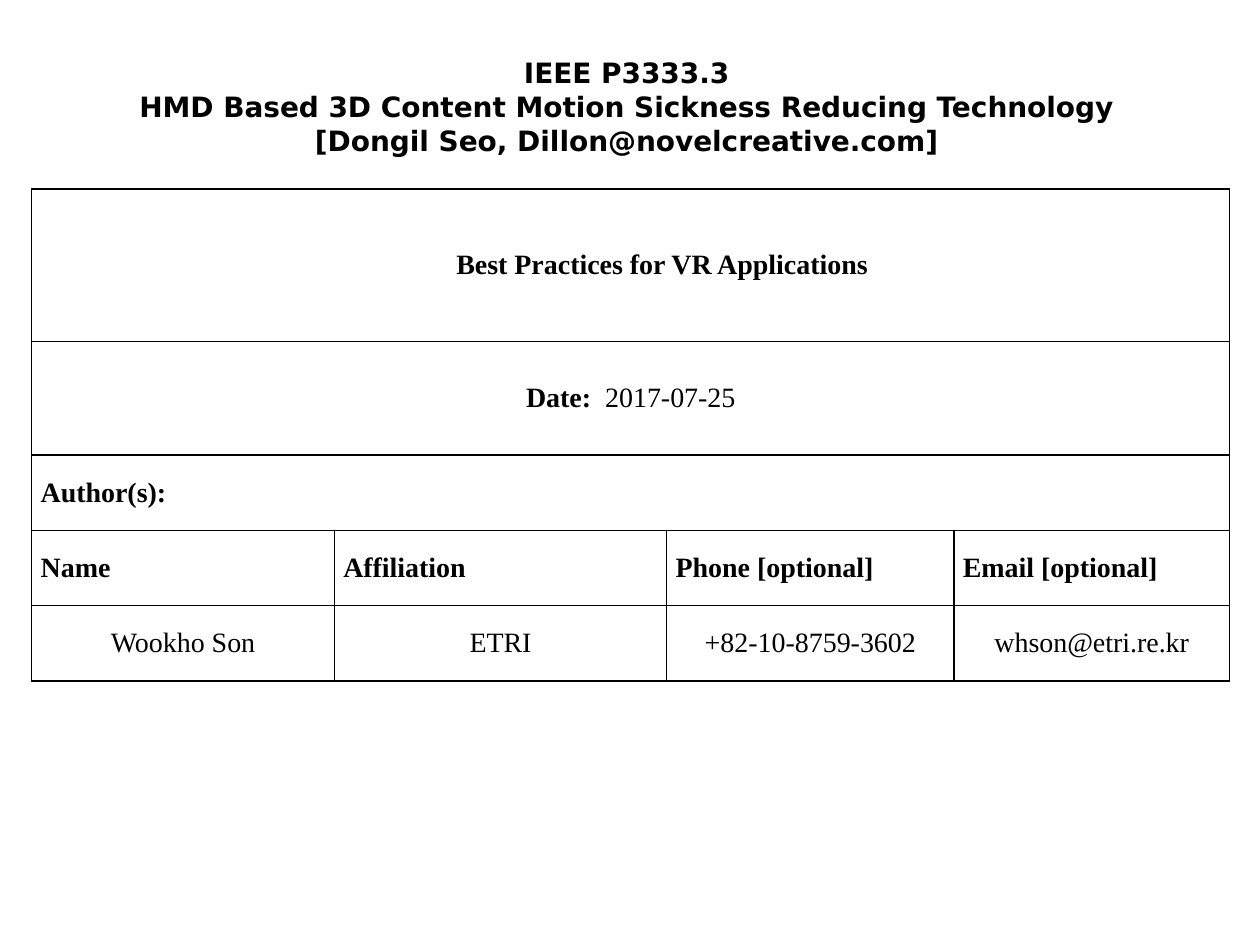
"""Build the title slide of a standards contribution with its author table."""
from copy import deepcopy

from lxml import etree
from pptx import Presentation
from pptx import util as u
from pptx.dml.color import RGBColor
from pptx.enum import text
from pptx.oxml.ns import qn

BLACK = RGBColor(0, 0, 0)
SANS, SERIF = "DejaVu Sans", "Times New Roman"
CENTER, LEFT = text.PP_ALIGN.CENTER, text.PP_ALIGN.LEFT
COLUMNS = (6.1, 6.7, 5.79, 5.56)
ROWS = (3.07, 2.29, 1.52, 1.52, 1.52)
HEADERS = ("Name", "Affiliation", "Phone [optional]", "Email [optional]")
AUTHOR = ("Wookho Son", "ETRI", "+82-10-8759-3602", "whson@etri.re.kr")


def set_all(obj, values):
    for name, value in values.items():
        setattr(obj, name, value)


def add_run(p, words, font, bold):
    r = p.add_run()
    r.text = words
    set_all(r.font, {"name": font, "size": u.Pt(16), "bold": bold})
    r.font.color.rgb = BLACK
    return r


def add_title(s, paragraphs):
    sp = s.shapes.add_textbox(u.Cm(2.49), u.Cm(0.99), u.Cm(20.29), u.Cm(2.31))
    tf = sp.text_frame
    set_all(tf, {"word_wrap": False, "vertical_anchor": text.MSO_ANCHOR.MIDDLE,
                 "auto_size": text.MSO_AUTO_SIZE.SHAPE_TO_FIT_TEXT})
    for i, lines in enumerate(paragraphs):
        p = tf.add_paragraph() if i else tf.paragraphs[0]
        p.alignment = CENTER
        for j, line in enumerate(lines):
            if j:
                p.add_line_break()
            r = add_run(p, line, SANS, True)
        for br in p._p.findall(qn("a:br")):
            br.append(deepcopy(r._r.rPr))


def add_borders(cell):
    tc_pr = cell._tc.get_or_add_tcPr()
    for side in ("a:lnL", "a:lnR", "a:lnT", "a:lnB"):
        ln = etree.SubElement(tc_pr, qn(side), w=str(u.Pt(1)))
        fill = etree.SubElement(ln, qn("a:solidFill"))
        etree.SubElement(fill, qn("a:srgbClr"), val=str(BLACK))


def add_grid(s):
    frame = s.shapes.add_table(len(ROWS), len(COLUMNS), u.Cm(0.64), u.Cm(3.81),
                               u.Cm(sum(COLUMNS)), u.Cm(sum(ROWS)))
    table = frame.table
    set_all(table, {"first_row": False, "horz_banding": False})
    for column, width in zip(table.columns, COLUMNS):
        column.width = u.Cm(width)
    for row, height in zip(table.rows, ROWS):
        row.height = u.Cm(height)
    for cell in table.iter_cells():
        set_all(cell, {"margin_left": u.Cm(0.18), "margin_right": u.Cm(0.18),
                       "margin_top": 0, "margin_bottom": 0,
                       "vertical_anchor": text.MSO_ANCHOR.MIDDLE})
        add_borders(cell)
        cell.fill.background()
    return table


def fill_cell(cell, runs, align=LEFT, after=0, indent=0):
    p = cell.text_frame.paragraphs[0]
    set_all(p, {"alignment": align, "space_after": u.Pt(after)})
    p._p.get_or_add_pPr().set("marL", str(u.Cm(indent)))
    for words, bold in runs:
        add_run(p, words, SERIF, bold)


def fill_wide_row(table, row, runs, **layout):
    cell = table.cell(row, 0)
    cell.merge(table.cell(row, len(COLUMNS) - 1))
    fill_cell(cell, runs, **layout)


def main():
    prs = Presentation()
    set_all(prs, {"slide_width": u.Cm(25.4), "slide_height": u.Cm(19.05)})
    s = prs.slides.add_slide(prs.slide_layouts[6])
    table = add_grid(s)
    fill_wide_row(table, 0, [("Best Practices for VR Applications", True)],
                  align=CENTER, after=12, indent=1.27)
    fill_wide_row(table, 1, [("Date: ", True), (" 2017-07-25", False)],
                  align=CENTER, after=12)
    fill_wide_row(table, 2, [("Author(s):", True)])
    for i, (header, value) in enumerate(zip(HEADERS, AUTHOR)):
        fill_cell(table.cell(3, i), [(header, True)])
        fill_cell(table.cell(4, i), [(value, False)], align=CENTER)
    add_title(s, [("IEEE P3333.3",
                   "HMD Based 3D Content Motion Sickness Reducing Technology"),
                  ("[Dongil Seo, Dillon@novelcreative.com]",)])
    prs.save("out.pptx")


if __name__ == "__main__":
    main()
